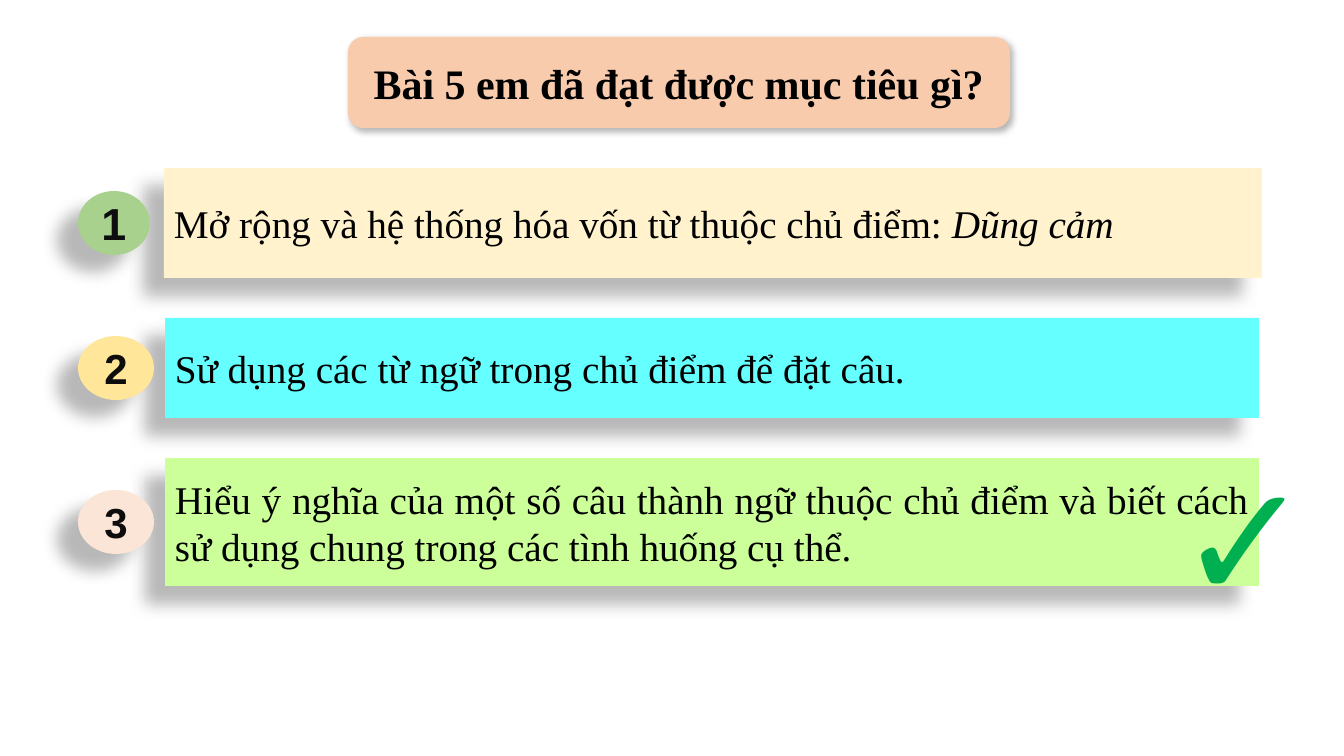
from dataclasses import dataclass

from lxml import etree
from pptx import Presentation
from pptx.dml.color import RGBColor
from pptx.enum.shapes import MSO_SHAPE as Shape
from pptx.enum.text import MSO_ANCHOR as Anchor, MSO_AUTO_SIZE as AutoSize, PP_ALIGN as Align
from pptx.oxml import parse_xml
from pptx.oxml.ns import nsdecls
from pptx.util import Pt

EMU_PER_PX = 914400 / 100.8

BLACK = RGBColor(0x00, 0x00, 0x00)
INK = RGBColor(0x0D, 0x0D, 0x0D)
PEACH = RGBColor(0xF8, 0xCB, 0xAD)
CREAM = RGBColor(0xFF, 0xF2, 0xCC)
CYAN = RGBColor(0x66, 0xFF, 0xFF)
LIME = RGBColor(0xCC, 0xFF, 0x99)
SAGE = RGBColor(0xA9, 0xD1, 0x8E)
YELLOW = RGBColor(0xFF, 0xE6, 0x99)
BLUSH = RGBColor(0xFB, 0xE5, 0xD6)
GREEN = RGBColor(0x00, 0xB0, 0x50)

SERIF = "Times New Roman"
TITLE_BOX = (348, 37, 662, 91)
CHECK_BOX = (1168, 434, 113, 206)
FIRST_TOP, ROW_GAP = 168, 40
BADGE_LEFT, BADGE_HEIGHT = 78, 64


@dataclass(frozen=True)
class Shadow:
    alpha: int
    blur: float
    distance: float
    angle: int


@dataclass(frozen=True)
class Goal:
    text: str
    left: int
    width: int
    height: int
    fill: RGBColor
    badge_width: int
    badge_fill: RGBColor
    badge_size: int
    emphasis: str = ""


SOFT_SHADOW = Shadow(30, 4.5, 2.6, 53)
LONG_SHADOW = Shadow(28, 11.8, 19.7, 141)

GOALS = [
    Goal("Mở rộng và hệ thống hóa vốn từ thuộc chủ điểm: ", 164, 1098, 110, CREAM,
         72, SAGE, 32, emphasis="Dũng cảm"),
    Goal("Sử dụng các từ ngữ trong chủ điểm để đặt câu.", 165, 1094, 100, CYAN,
         76, YELLOW, 30),
    Goal("Hiểu ý nghĩa của một số câu thành ngữ thuộc chủ điểm và biết cách "
         "sử dụng chung trong các tình huống cụ thể.", 165, 1094, 128, LIME,
         76, BLUSH, 30),
]


def px(n: float) -> int:
    return round(n * EMU_PER_PX)


def add_shadow(s, shadow: Shadow) -> None:
    s.shadow.inherit = False
    effects = s._element.spPr.find("{*}effectLst")
    outer = parse_xml(
        f'<a:outerShdw {nsdecls("a")} blurRad="{Pt(shadow.blur)}" dist="{Pt(shadow.distance)}" '
        f'dir="{shadow.angle * 60000}" algn="ctr" rotWithShape="0"/>')
    color = etree.SubElement(outer, outer.tag.replace("outerShdw", "srgbClr"), val="000000")
    etree.SubElement(color, outer.tag.replace("outerShdw", "alpha"), val=str(shadow.alpha * 1000))
    effects.append(outer)


def add_filled(shapes, kind: Shape, box: tuple[int, int, int, int], fill: RGBColor,
               shadow: Shadow):
    s = shapes.add_shape(kind, *map(px, box))
    s.fill.solid()
    s.fill.fore_color.rgb = fill
    s.line.fill.background()
    add_shadow(s, shadow)
    return s


def write(s, text: str, *, size: int, font: str = SERIF, color: RGBColor = BLACK,
          bold: bool = False, align: Align = Align.CENTER, anchor: Anchor = Anchor.MIDDLE,
          emphasis: str = "") -> None:
    """Fill a shape with one paragraph, ending in an optional italic run."""
    tf = s.text_frame
    tf.word_wrap = True
    tf.auto_size = AutoSize.NONE
    tf.vertical_anchor = anchor
    p = tf.paragraphs[0]
    p.alignment = align
    for part, italic in ((text, False), (emphasis, True)):
        if part:
            r = p.add_run()
            r.text = part
            r.font.name, r.font.size = font, Pt(size)
            r.font.bold, r.font.italic = bold, italic
            r.font.color.rgb = color


def add_goal(slide, number: int, goal: Goal, top: int) -> None:
    shapes = slide.shapes.add_group_shape().shapes
    panel = add_filled(shapes, Shape.RECTANGLE, (goal.left, top, goal.width, goal.height),
                       goal.fill, LONG_SHADOW)
    write(panel, goal.text, size=28, align=Align.JUSTIFY, emphasis=goal.emphasis)
    badge_top = top + (goal.height - BADGE_HEIGHT) // 2
    badge = add_filled(shapes, Shape.OVAL,
                       (BADGE_LEFT, badge_top, goal.badge_width, BADGE_HEIGHT),
                       goal.badge_fill, LONG_SHADOW)
    write(badge, str(number), size=goal.badge_size, font="Arial", color=INK, bold=True)


def add_title(slide, text: str) -> None:
    """Put the title placeholder in front of a rounded panel."""
    panel = add_filled(slide.shapes, Shape.ROUNDED_RECTANGLE, TITLE_BOX, PEACH, SOFT_SHADOW)
    title = slide.shapes.title
    title.left, title.top, title.width, title.height = map(px, TITLE_BOX)
    write(title, text, size=30, bold=True)
    panel._element.addnext(title._element)


def main() -> None:
    prs = Presentation()
    prs.slide_width, prs.slide_height = px(1344), px(756)
    slide = prs.slides.add_slide(prs.slide_layouts.get_by_name("Title Only"))

    top = FIRST_TOP
    for number, goal in enumerate(GOALS, start=1):
        add_goal(slide, number, goal, top)
        top += goal.height + ROW_GAP

    add_title(slide, "Bài 5 em đã đạt được mục tiêu gì?")
    check = slide.shapes.add_textbox(*map(px, CHECK_BOX))
    write(check, "✓", size=115, font="Calibri", color=GREEN, align=Align.LEFT, anchor=Anchor.TOP)
    prs.save("out.pptx")


if __name__ == "__main__":
    main()
